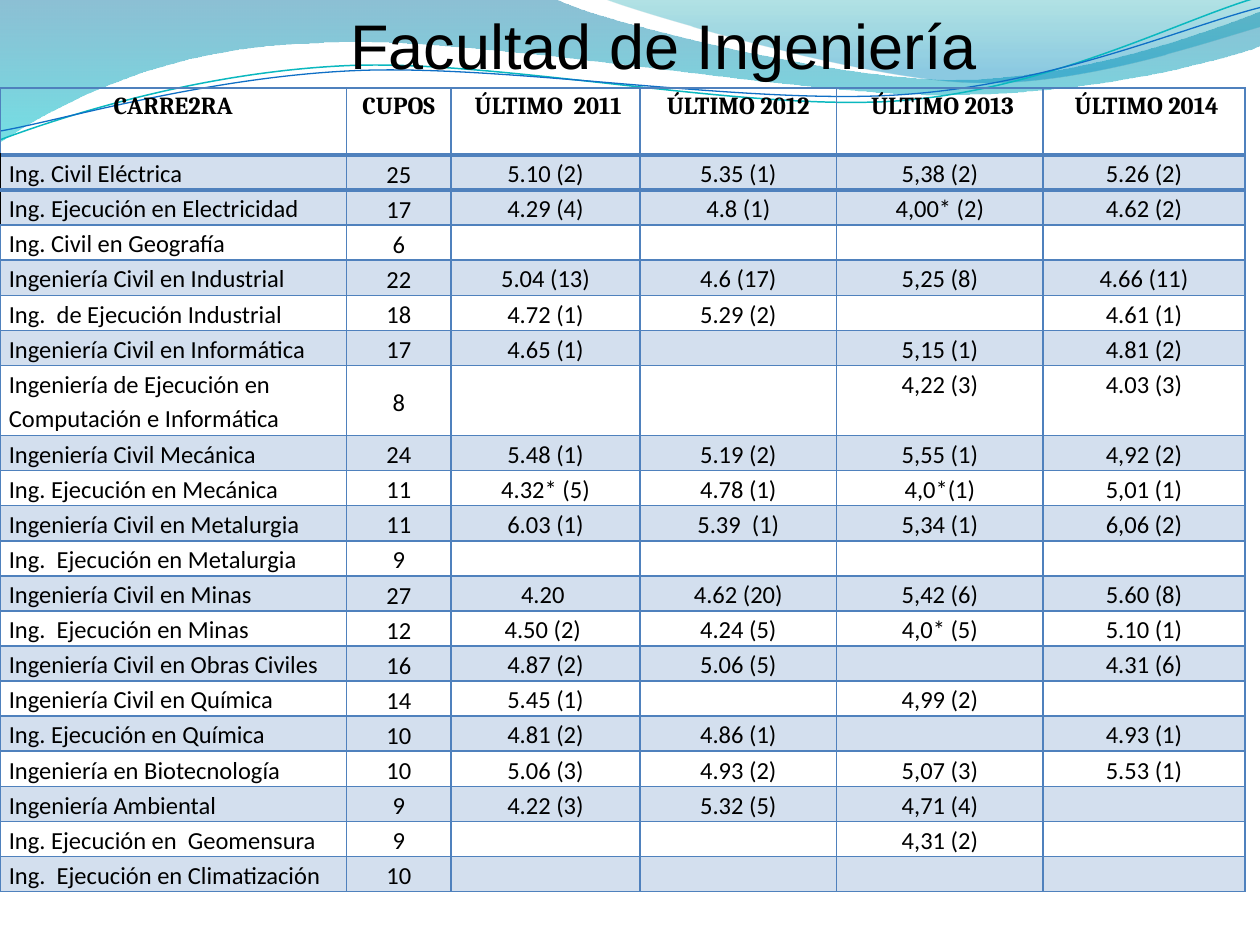
import math

import lxml.etree
import pptx
import pptx.dml.color
import pptx.enum.text
import pptx.oxml.ns
import pptx.util

Inches, Pt = pptx.util.Inches, pptx.util.Pt
PP_ALIGN = pptx.enum.text.PP_ALIGN
MSO_ANCHOR = pptx.enum.text.MSO_ANCHOR
qn = pptx.oxml.ns.qn

COLORS = {
    "text": "000000", "band": "D3DFEE", "border": "4F81BD", "edge": "000000",
    "deep_blue": "0074A1", "turquoise": "00C6CF",
    "teal": "00A1A9", "blue": "008BBF",
    "line_teal": "0AB8BF", "line_blue": "0F6FC6",
}

# Outlines: a start point, then pieces of one point (line) or three (Bezier curve).
LEFT_WAVE = [
    [(0, 0)], [(4.4, -0.01)],
    [(4.76, 0.17), (6.64, 0.63), (7.58, 0.63)],
    [(8.53, 0.63), (9.58, 0.26), (10, 0.09)], [(10.01, 0.36)],
    [(9.83, 0.44), (8.7, 0.76), (7.46, 0.75)],
    [(6.22, 0.75), (3.82, 0.28), (2.57, 0.34)],
    [(1.29, 0.36), (0.46, 0.83), (-0.01, 1.13)], [(0, 0)],
]
RIGHT_WAVE = [
    [(4.79, -0.01)],
    [(5.09, 0.11), (6.82, 0.62), (7.69, 0.65)],
    [(8.56, 0.69), (9.61, 0.32), (10, 0.21)], [(10, 0)], [(4.79, -0.01)],
]
TEAL_LINE = [
    [(0, 1.11)],
    [(0.48, 0.93), (1.58, 0.57), (2.77, 0.52)],
    [(3.95, 0.47), (5.93, 0.89), (7.13, 0.8)],
    [(8.33, 0.71), (9.38, 0.15), (9.98, -0.02)],
]
BLUE_LINE = [
    [(0, 1.04)],
    [(0.47, 0.96), (1.64, 0.61), (2.83, 0.56)],
    [(4.03, 0.51), (5.97, 0.84), (7.17, 0.75)],
    [(8.36, 0.67), (9.41, 0.21), (10, 0.06)],
]
LINE_TILT = -2.7

COLUMN_WIDTHS = [2.75, 0.83, 1.5, 1.56, 1.64, 1.6]
TABLE_HEIGHT, HEADER_HEIGHT, TALL_ROW = 6.38, 0.53, 7
THICK_RULES = (1, 2)  # rows with a thick rule above them
ROWS = [
    ["CARRE2RA", "CUPOS", " ÚLTIMO  2011", "ÚLTIMO 2012", " ÚLTIMO 2013", " ÚLTIMO 2014"],
    ["Ing. Civil Eléctrica", "25", "5.10 (2)", "5.35 (1)", "5,38 (2)", "5.26 (2)"],
    ["Ing. Ejecución en Electricidad", "17", "4.29 (4)", "4.8 (1)", "4,00* (2)", "4.62 (2)"],
    ["Ing. Civil en Geografía", "6", "", "", "", ""],
    ["Ingeniería Civil en Industrial", "22", "5.04 (13)", "4.6 (17)", "5,25 (8)", "4.66 (11)"],
    ["Ing.  de Ejecución Industrial", "18", "4.72 (1)", "5.29 (2)", "", "4.61 (1)"],
    ["Ingeniería Civil en Informática", "17", "4.65 (1)", "", "5,15 (1)", "4.81 (2)"],
    ["Ingeniería de Ejecución en Computación e Informática", "8", "", "", "4,22 (3)", "4.03 (3)"],
    ["Ingeniería Civil Mecánica", "24", "5.48 (1)", "5.19 (2)", "5,55 (1)", "4,92 (2)"],
    ["Ing. Ejecución en Mecánica", "11", "4.32* (5)", "4.78 (1)", "4,0*(1)", "5,01 (1)"],
    ["Ingeniería Civil en Metalurgia", "11", "6.03 (1)", "5.39  (1)", "5,34 (1)", "6,06 (2)"],
    ["Ing.  Ejecución en Metalurgia", "9", "", "", "", ""],
    ["Ingeniería Civil en Minas", "27", "4.20 ", "4.62 (20)", "5,42 (6)", "5.60 (8)"],
    ["Ing.  Ejecución en Minas", "12", "4.50 (2) ", "4.24 (5)", "4,0* (5)", "5.10 (1)"],
    ["Ingeniería Civil en Obras Civiles", "16", "4.87 (2)", "5.06 (5)", "", "4.31 (6)"],
    ["Ingeniería Civil en Química", "14", "5.45 (1)", "", "4,99 (2)", ""],
    ["Ing. Ejecución en Química", "10", "4.81 (2)", "4.86 (1)", "", "4.93 (1)"],
    ["Ingeniería en Biotecnología", "10", "5.06 (3)", "4.93 (2)", "5,07 (3)", "5.53 (1)"],
    ["Ingeniería Ambiental", "9", "4.22 (3)", "5.32 (5)", "4,71 (4)", ""],
    ["Ing. Ejecución en  Geomensura", "9", "", "", "4,31 (2)", ""],
    ["Ing.  Ejecución en Climatización", "10", "", "", "", ""],
]


def rgb(name):
    return pptx.dml.color.RGBColor.from_string(COLORS[name])


def turn(outline, degrees, cx=4.99, cy=0.58):
    """Turn an outline clockwise around a centre."""
    cos, sin = math.cos(math.radians(degrees)), math.sin(math.radians(degrees))
    return [[(cx + (x - cx) * cos - (y - cy) * sin,
              cy + (x - cx) * sin + (y - cy) * cos) for x, y in piece]
            for piece in outline]


class SlideBuilder:
    def __init__(self, prs):
        self.slide = prs.slides.add_slide(prs.slide_layouts[6])

    def outline(self, outline, close):
        """Build a freeform through all points, then join triples into curves."""
        start, *rest = [(Inches(x), Inches(y)) for piece in outline for x, y in piece]
        builder = self.slide.shapes.build_freeform(*start)
        builder.add_line_segments(rest, close=close)
        sp = builder.convert_to_shape()
        sp.shadow.inherit = False
        segments = iter(list(sp._element.iter(qn("a:lnTo"))))
        for piece in outline[1:]:
            first, *others = [next(segments) for _ in piece]
            if others:
                curve = lxml.etree.Element(qn("a:cubicBezTo"))
                first.addprevious(curve)
                for segment in (first, *others):
                    curve.append(segment[0])
                    segment.getparent().remove(segment)
        return sp

    def wave(self, outline, stops):
        """Draw a wave; each stop is (colour, position, opacity percent)."""
        sp = self.outline(outline, close=True)
        sp.line.fill.background()
        sp.fill.gradient()
        sp.fill.gradient_angle = 270
        for stop, (color, position, _) in zip(sp.fill.gradient_stops, stops):
            stop.color.rgb = rgb(color)
            stop.position = position
        for clr, (_, _, opacity) in zip(sp._element.spPr.iter(qn("a:srgbClr")), stops):
            lxml.etree.SubElement(clr, qn("a:alpha"), val=str(opacity * 1000))

    def wave_line(self, outline, color, width):
        sp = self.outline(turn(outline, -LINE_TILT), close=False)
        sp.rotation = LINE_TILT
        sp.fill.background()
        sp.line.color.rgb = rgb(color)
        sp.line.width = Pt(width)

    def font(self, p, name, size, bold=False):
        for r in p.runs:
            r.font.name, r.font.size, r.font.bold = name, Pt(size), bold
            r.font.color.rgb = rgb("text")
        p._p.get_or_add_endParaRPr().set("sz", str(size * 100))

    def border(self, cell, side, width, color="border"):
        ln = lxml.etree.SubElement(cell._tc.get_or_add_tcPr(), qn(f"a:ln{side}"),
                                   w=str(Pt(width)))
        fill = lxml.etree.SubElement(ln, qn("a:solidFill"))
        lxml.etree.SubElement(fill, qn("a:srgbClr"), val=COLORS[color])

    def cell(self, cell, text, row, col):
        for side in "LRTB":
            if side == "L" and col == 0 and row in THICK_RULES:
                self.border(cell, side, 0.5, "edge")
                continue
            rule = {"T": row, "B": row + 1}.get(side)
            self.border(cell, side, 2.25 if rule in THICK_RULES else 1)
        if row == 1 or (row > 0 and row % 2 == 0):
            cell.fill.solid()
            cell.fill.fore_color.rgb = rgb("band")
        else:
            cell.fill.background()
        cell.margin_left = cell.margin_right = Inches(0.07)
        cell.margin_top = cell.margin_bottom = 0
        cell.vertical_anchor = MSO_ANCHOR.MIDDLE if row and col == 1 else MSO_ANCHOR.TOP
        p = cell.text_frame.paragraphs[0]
        p.text = text
        p.alignment = PP_ALIGN.LEFT if row and col == 0 else PP_ALIGN.CENTER
        p.line_spacing = 1.15
        self.font(p, "Calibri" if row else "Cambria", 14, bold=row == 0)

    def table(self, left, top, rows):
        row_height = (TABLE_HEIGHT - HEADER_HEIGHT) / len(rows)  # the tall row counts twice
        heights = [HEADER_HEIGHT] + [row_height] * (len(rows) - 1)
        heights[TALL_ROW] *= 2
        table = self.slide.shapes.add_table(
            len(rows), len(COLUMN_WIDTHS), Inches(left), Inches(top),
            Inches(sum(COLUMN_WIDTHS)), Inches(TABLE_HEIGHT)).table
        table.first_row = table.horz_banding = False
        for column, width in zip(table.columns, COLUMN_WIDTHS):
            column.width = Inches(width)
        for i, (height, texts) in enumerate(zip(heights, rows)):
            table.rows[i].height = Inches(height)
            for j, text in enumerate(texts):
                self.cell(table.cell(i, j), text, i, j)

    def title(self, text, left, top, width, height, indent):
        tf = self.slide.shapes.add_textbox(
            Inches(left), Inches(top), Inches(width), Inches(height)).text_frame
        tf.word_wrap = True
        tf.margin_left = Inches(indent)
        tf.text = text
        self.font(tf.paragraphs[0], "Arial", 36)


def main():
    prs = pptx.Presentation()
    prs.slide_width, prs.slide_height = Inches(10), Inches(7.5)
    s = SlideBuilder(prs)
    s.wave(LEFT_WAVE, [("deep_blue", 0, 45), ("turquoise", 1, 55)])
    s.wave(RIGHT_WAVE, [("teal", 0, 30), ("blue", 0.8, 45)])
    s.wave_line(TEAL_LINE, "line_teal", 0.85)
    s.wave_line(BLUE_LINE, "line_blue", 0.75)
    s.table(0, 0.7, ROWS)
    s.title("Facultad de Ingeniería", 1.3, 0, 8.35, 0.71, indent=1.48)
    prs.save("out.pptx")


if __name__ == "__main__":
    main()
